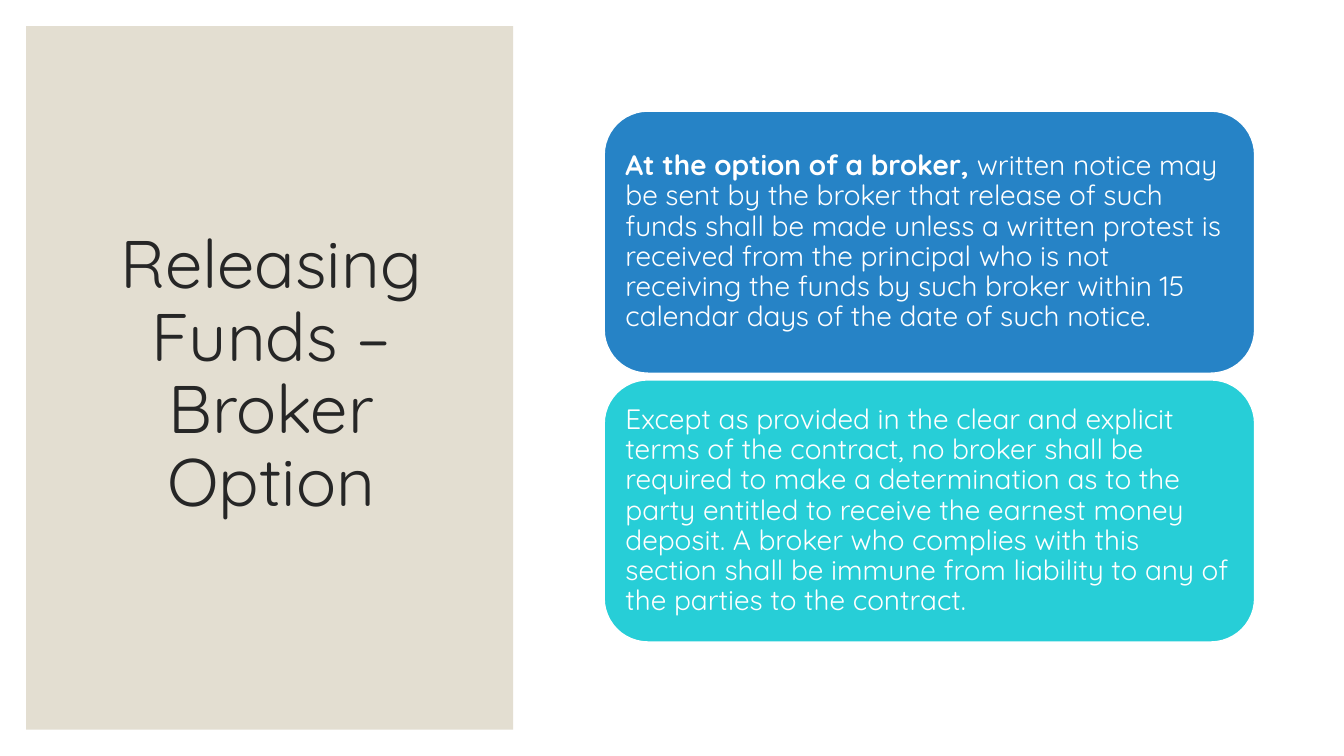
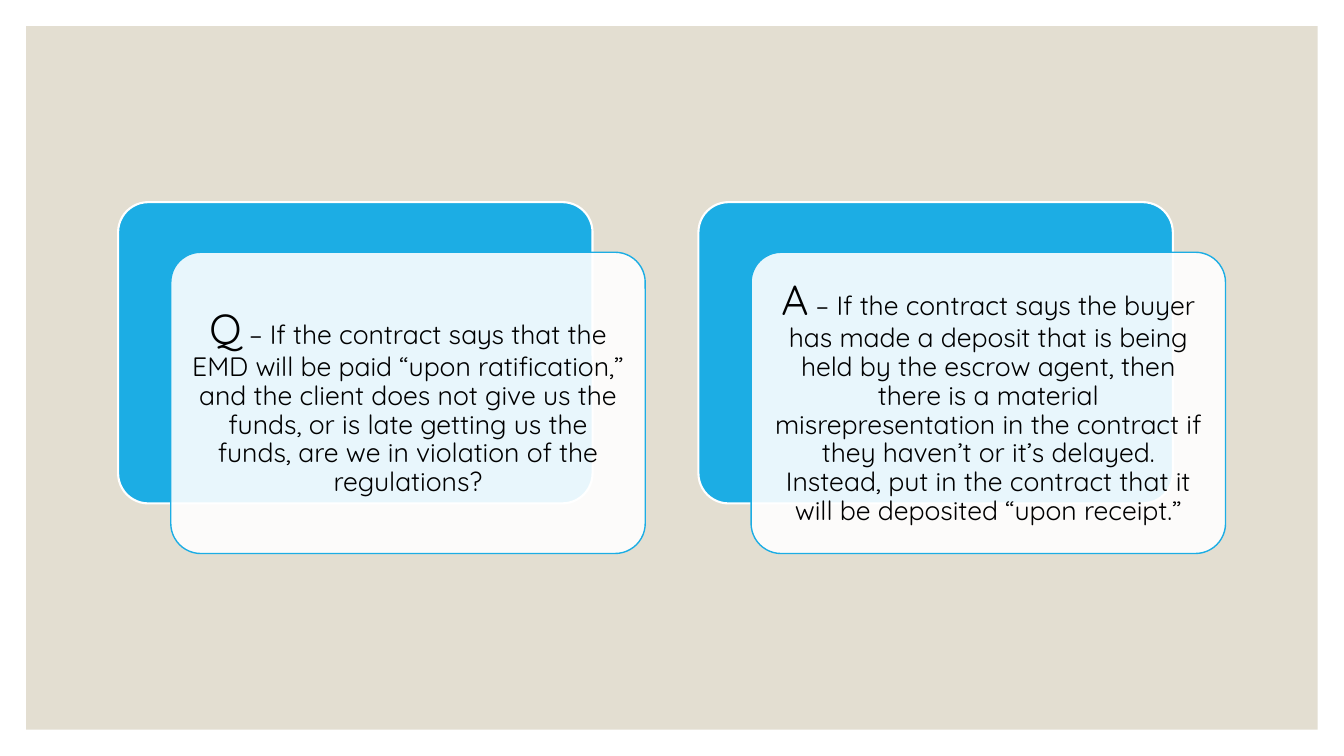
from dataclasses import dataclass

from lxml.etree import SubElement
from pptx import Presentation
from pptx.dml.color import RGBColor
from pptx.enum.shapes import MSO_SHAPE
from pptx.enum.text import MSO_ANCHOR, PP_ALIGN
from pptx.oxml.ns import qn
from pptx.presentation import Presentation as Deck
from pptx.shapes.autoshape import Shape
from pptx.slide import Slide
from pptx.util import Pt


@dataclass(frozen=True)
class Theme:
    font: str = "Quicksand"
    white: str = "FFFFFF"
    black: str = "000000"
    title: str = "262626"
    panel: str = "E3DED1"
    blue: str = "2683C6"
    teal: str = "27CED7"
    sky: str = "1CADE4"
    title_size: float = 48
    body_size: float = 20
    letter_size: float = 30
    answer_size: float = 19
    line_spacing: float = 0.9


@dataclass(frozen=True)
class Box:
    left: float
    top: float
    width: float
    height: float

    def moved(self, dx: float = 0, dy: float = 0) -> "Box":
        return Box(self.left + dx, self.top + dy, self.width, self.height)

    def points(self) -> tuple[Pt, Pt, Pt, Pt]:
        return Pt(self.left), Pt(self.top), Pt(self.width), Pt(self.height)


@dataclass(frozen=True)
class Run:
    text: str
    size: float
    color: str
    bold: bool = False


@dataclass(frozen=True)
class Rule:
    fill: str
    runs: tuple[Run, ...]


@dataclass(frozen=True)
class Card:
    letter: str
    text: str


T = Theme()
WIDTH, HEIGHT = 960, 540
MARGIN = 18.72
SIDE_PANEL_WIDTH = 347.8
TITLE_BOX = Box(45.4, 43.9, 296.6, 449.3)
RULE_BOX = Box(431.6, 79.4, 464.6, 187.2)
RULE_PITCH = 192
RULE_INSET = 6
CARD_BOX = Box(84.4, 144.4, 338.9, 215.2)
CARD_PITCH = 414.5
CARD_DX, CARD_DY = 37.6, 35.8
CARD_INSET = 8.6
CARD_CORNER = 0.1
CARD_OPACITY = 90

RULES = (
    Rule(T.blue, (
        Run("At the option of a broker, ", T.body_size, T.white, True),
        Run("written notice may be sent by the broker that release of such funds "
            "shall be made unless a written protest is received from the principal "
            "who is not receiving the funds by such broker within 15 calendar days "
            "of the date of such notice.", T.body_size, T.white),
    )),
    Rule(T.teal, (
        Run("Except as provided in the clear and explicit terms of the contract, "
            "no broker shall be required to make a determination as to the party "
            "entitled to receive the earnest money deposit. A broker who complies "
            "with this section shall be immune from liability to any of the parties "
            "to the contract.", T.body_size, T.white),
    )),
)

CARDS = (
    Card("Q", " – If the contract says that the EMD will be paid “upon ratification,” "
              "and the client does not give us the funds, or is late getting us the "
              "funds, are we in violation of the regulations?"),
    Card("A", " – If the contract says the buyer has made a deposit that is being held "
              "by the escrow agent, then there is a material misrepresentation in the "
              "contract if they haven’t or it’s delayed. Instead, put in the contract "
              "that it will be deposited “upon receipt.”"),
)


def add_block(s: Slide, kind: MSO_SHAPE, box: Box, fill: str,
              line: str | None = None, line_width: float = 1) -> Shape:
    sp = s.shapes.add_shape(kind, *box.points())
    sp.shadow.inherit = False
    sp.fill.solid()
    sp.fill.fore_color.rgb = RGBColor.from_string(fill)
    if line is None:
        sp.line.fill.background()
    else:
        sp.line.color.rgb = RGBColor.from_string(line)
        sp.line.width = Pt(line_width)
    return sp


def set_opacity(sp: Shape, percent: int) -> None:
    color = sp.fill._xPr.find(qn("a:solidFill"))[0]
    SubElement(color, qn("a:alpha")).set("val", str(percent * 1000))


def write(sp: Shape, runs: tuple[Run, ...], align: PP_ALIGN,
          inset_x: float, inset_y: float) -> None:
    tf = sp.text_frame
    tf.word_wrap = True
    tf.vertical_anchor = MSO_ANCHOR.MIDDLE
    tf.margin_left = tf.margin_right = Pt(inset_x)
    tf.margin_top = tf.margin_bottom = Pt(inset_y)
    p = tf.paragraphs[0]
    p.alignment = align
    p.line_spacing = T.line_spacing
    for run in runs:
        r = p.add_run()
        r.text = run.text
        r.font.name = T.font
        r.font.size = Pt(run.size)
        r.font.bold = run.bold
        r.font.color.rgb = RGBColor.from_string(run.color)


def add_panel_slide(prs: Deck, panel_width: float) -> Slide:
    s = prs.slides.add_slide(prs.slide_layouts[6])
    panel = Box(MARGIN, MARGIN, panel_width, HEIGHT - 2 * MARGIN)
    add_block(s, MSO_SHAPE.RECTANGLE, panel, T.panel)
    return s


def add_card(s: Slide, card: Card, box: Box) -> None:
    back = add_block(s, MSO_SHAPE.ROUNDED_RECTANGLE, box, T.sky, T.white, 1.5)
    front = add_block(s, MSO_SHAPE.ROUNDED_RECTANGLE, box.moved(CARD_DX, CARD_DY),
                      T.white, T.sky)
    for sp in (back, front):
        sp.adjustments[0] = CARD_CORNER
    set_opacity(front, CARD_OPACITY)
    runs = (Run(card.letter, T.letter_size, T.black),
            Run(card.text, T.answer_size, T.black))
    write(front, runs, PP_ALIGN.CENTER, CARD_INSET, CARD_INSET)


def build_broker_option(prs: Deck) -> None:
    s = add_panel_slide(prs, SIDE_PANEL_WIDTH)
    title = s.shapes.add_textbox(*TITLE_BOX.points())
    write(title, (Run("Releasing Funds – Broker Option", T.title_size, T.title),),
          PP_ALIGN.CENTER, 7.2, 3.6)
    for i, rule in enumerate(RULES):
        sp = add_block(s, MSO_SHAPE.ROUNDED_RECTANGLE, RULE_BOX.moved(dy=i * RULE_PITCH),
                       rule.fill, T.white)
        write(sp, rule.runs, PP_ALIGN.LEFT, RULE_INSET, RULE_INSET)


def build_question_answer(prs: Deck) -> None:
    s = add_panel_slide(prs, WIDTH - 2 * MARGIN)
    for i, card in enumerate(CARDS):
        add_card(s, card, CARD_BOX.moved(dx=i * CARD_PITCH))


def main() -> None:
    prs = Presentation()
    prs.slide_width, prs.slide_height = Pt(WIDTH), Pt(HEIGHT)
    build_broker_option(prs)
    build_question_answer(prs)
    prs.save("out.pptx")


if __name__ == "__main__":
    main()
